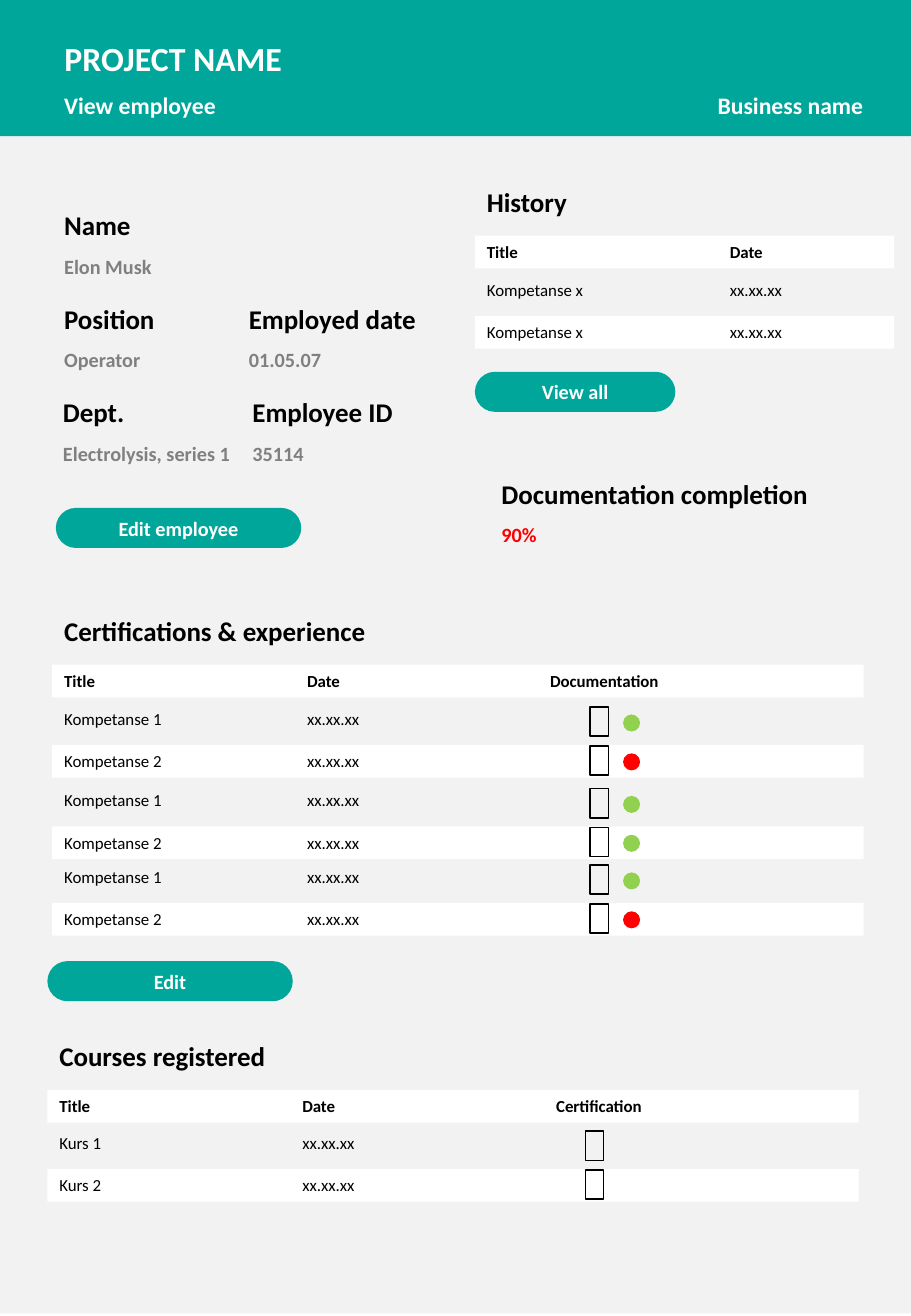
from dataclasses import dataclass

from lxml import etree
from pptx import Presentation
from pptx.dml.color import RGBColor
from pptx.enum.shapes import MSO_SHAPE
from pptx.enum.text import MSO_ANCHOR, MSO_AUTO_SIZE, PP_ALIGN
from pptx.oxml.ns import qn
from pptx.util import Pt

PX = 9144
RECT, OVAL, ROUND = MSO_SHAPE.RECTANGLE, MSO_SHAPE.OVAL, MSO_SHAPE.ROUNDED_RECTANGLE
TOP, MIDDLE = MSO_ANCHOR.TOP, MSO_ANCHOR.MIDDLE
LEFT, CENTER = PP_ALIGN.LEFT, PP_ALIGN.CENTER
GROW, FIXED = MSO_AUTO_SIZE.SHAPE_TO_FIT_TEXT, MSO_AUTO_SIZE.NONE
FONT = "Calibri"
HEX = {
    "page": "F2F2F2", "teal": "00A699", "white": "FFFFFF", "black": "000000",
    "gray": "808080", "red": "FF0000", "green": "92D050",
}


@dataclass
class Label:
    text: str
    left: int
    top: int
    width: int
    height: int
    size: int
    color: str


@dataclass
class Field:
    name: str
    value: str
    left: int
    top: int
    width: int
    color: str = "gray"


@dataclass
class Button:
    text: str
    left: int
    top: int
    width: int


@dataclass
class Row:
    text: str
    top: int
    box: bool = False
    dot: str = ""


@dataclass
class Grid:
    title: str
    left: int
    top: int
    width: int
    head: str
    rows: list[Row]
    stop: int = 400


LABELS = [
    Label("Business name", 581, 70, 154, 34, 14, "white"),
    Label("View employee", 43, 70, 263, 34, 14, "white"),
]
FIELDS = [
    Field("Name", "Elon Musk", 43, 167, 104),
    Field("Position", "Operator", 43, 244, 104),
    Field("Dept.", "Electrolysis, series 1", 42, 321, 104),
    Field("Employed date", "01.05.07", 195, 244, 178),
    Field("Employee ID", "35114", 198, 321, 175),
    Field("Documentation completion", "90%", 403, 388, 285, "red"),
]
BUTTONS = [
    Button("Edit employee", 46, 418, 202),
    Button("View all", 391, 306, 165),
    Button("Edit", 39, 791, 202),
]
DATE = "\t\txx.xx.xx"
GRIDS = [
    Grid("History", 391, 148, 345, "Title\t\tDate",
         [Row("Kompetanse x", 225), Row("Kompetanse x", 260)]),
    Grid("Certifications & experience", 43, 501, 668, "Title\t\tDate\t\tDocumentation",
         [Row("Kompetanse 1", 578, True, "green"), Row("Kompetanse 2", 613, True, "red"),
          Row("Kompetanse 1", 645, True, "green"), Row("Kompetanse 2", 680, True, "green"),
          Row("Kompetanse 1", 708, True, "green"), Row("Kompetanse 2", 743, True, "red")]),
    Grid("Courses registered", 39, 851, 668, "Title\t\tDate\t\tCertification",
         [Row("Kurs 1", 927, True), Row("Kurs 2", 962, True)], 409),
]


def rgb(name: str) -> RGBColor:
    return RGBColor.from_string(HEX[name])


def style(shape, text: str, size: int, color: str, bold=True,
          align=LEFT, anchor=TOP, fit=GROW) -> None:
    frame = shape.text_frame
    frame.text = text
    frame.word_wrap = True
    frame.auto_size = fit
    frame.vertical_anchor = anchor
    line = frame.paragraphs[0]
    line.alignment = align
    for run in line.runs:
        font = run.font
        font.name, font.size, font.bold = FONT, Pt(size), bold
        font.color.rgb = rgb(color)


def scale(*sizes: int) -> list[int]:
    return [size * PX for size in sizes]


def draw(slide, kind, left: int, top: int, width: int, height: int, fill="", line=""):
    shape = slide.shapes.add_shape(kind, *scale(left, top, width, height))
    shape.shadow.inherit = False
    if fill:
        shape.fill.solid()
        shape.fill.fore_color.rgb = rgb(fill)
    else:
        shape.fill.background()
    if line:
        shape.line.color.rgb = rgb(line)
        shape.line.width = Pt(1)
    else:
        shape.line.fill.background()
    return shape


def write(slide, label: Label) -> None:
    box = slide.shapes.add_textbox(*scale(label.left, label.top, label.width, label.height))
    style(box, label.text, label.size, label.color)


def tab(shape, last: int) -> None:
    props = shape.text_frame.paragraphs[0]._p.get_or_add_pPr()
    stops = etree.SubElement(props, qn("a:tabLst"))
    for pos in (100, 200, 300, last):
        etree.SubElement(stops, qn("a:tab"), pos=str(pos * PX), algn="l")


def strip(slide, grid: Grid, top: int, text: str, white: bool, bold: bool) -> None:
    if white:
        shape = draw(slide, RECT, grid.left, top, grid.width, 27, "white")
    else:
        shape = slide.shapes.add_textbox(*scale(grid.left, top, grid.width, 27))
    style(shape, text, 10, "black", bold)
    tab(shape, grid.stop)


def add_grid(slide, grid: Grid) -> None:
    write(slide, Label(grid.title, grid.left, grid.top, 299, 37, 16, "black"))
    strip(slide, grid, grid.top + 46, grid.head, True, True)
    for num, row in enumerate(grid.rows):
        white = num % 2 == 1
        strip(slide, grid, row.top, row.text + DATE, white, False)
        mark = row.top + (1 if white else 4)
        if row.box:
            draw(slide, RECT, grid.left + 443, mark, 15, 24, line="black")
        if row.dot:
            draw(slide, OVAL, grid.left + 470, mark + 6, 14, 14, row.dot)


def add_field(slide, field: Field) -> None:
    write(slide, Label(field.name, field.left, field.top, field.width, 37, 16, "black"))
    write(slide, Label(field.value, field.left, field.top + 37, 178, 30, 12, field.color))


def add_button(slide, button: Button) -> None:
    shape = draw(slide, ROUND, button.left, button.top, button.width, 33, "teal")
    shape.adjustments[0] = 0.5
    style(shape, button.text, 12, "white", align=CENTER, anchor=MIDDLE, fit=FIXED)


def main() -> None:
    deck = Presentation()
    deck.slide_width, deck.slide_height = scale(750, 1083)
    slide = deck.slides.add_slide(deck.slide_layouts[5])
    draw(slide, RECT, 0, -2, 750, 1083, "page")
    banner = draw(slide, RECT, 0, 0, 750, 112, "teal")
    title = slide.shapes.title
    banner._element.addnext(title._element)
    title.left, title.top, title.width, title.height = scale(43, 26, 431, 44)
    style(title, "PROJECT NAME", 20, "white")
    for label in LABELS:
        write(slide, label)
    for field in FIELDS:
        add_field(slide, field)
    for grid in GRIDS:
        add_grid(slide, grid)
    for button in BUTTONS:
        add_button(slide, button)
    deck.save("out.pptx")


if __name__ == "__main__":
    main()
